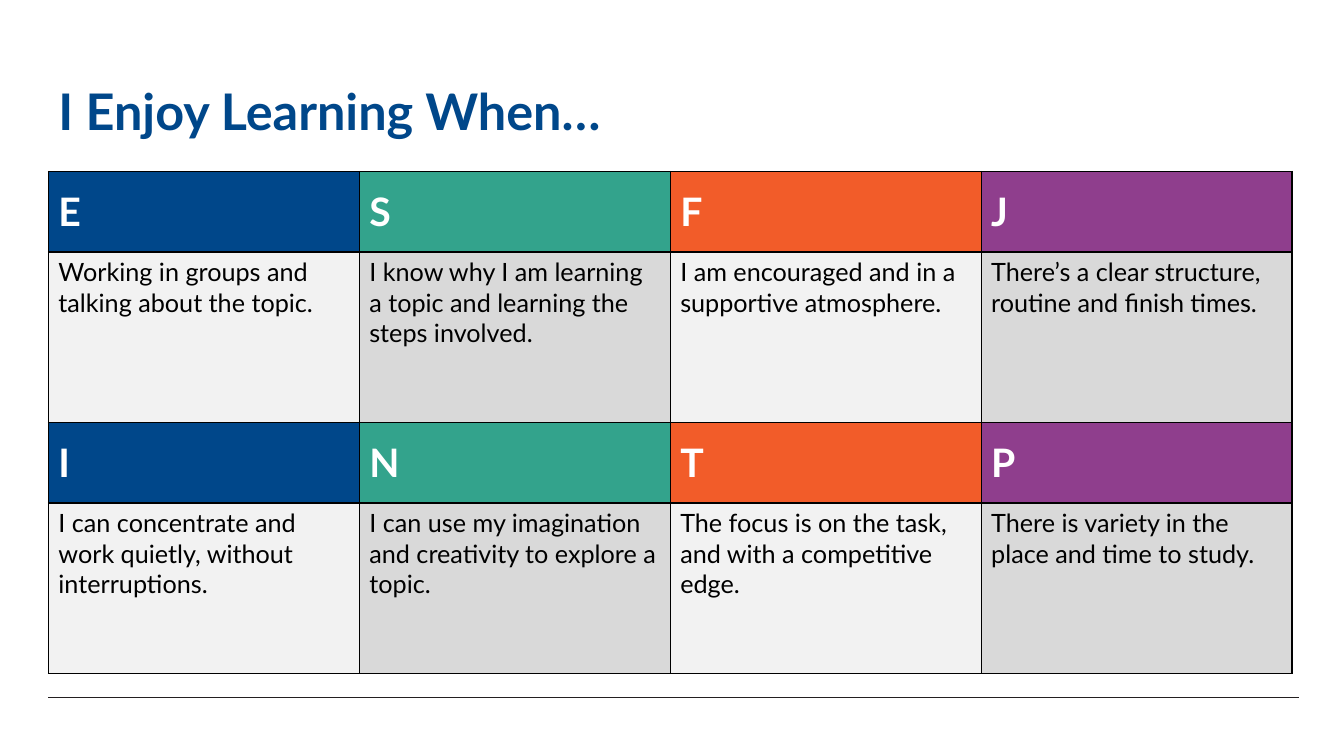
from lxml import etree
from pptx import Presentation
from pptx import util as u
from pptx.dml.color import RGBColor
from pptx.enum import shapes, text
from pptx.oxml.ns import qn

COLORS = {
    "blue": "00478A", "green": "33A38C", "orange": "F25C29", "purple": "8F3E8D",
    "light": "F2F2F2", "grey": "D9D9D9", "white": "FFFFFF", "black": "000000",
    "rule": "231F20",
}
TITLE = {"size": u.Pt(36), "bold": True, "color": "blue"}
LETTER = {"size": u.Pt(28), "bold": True, "color": "white"}
BODY = {"size": u.Pt(18), "bold": False, "color": "black"}

LETTER_FILLS = ["blue", "green", "orange", "purple"]
BODY_FILLS = ["light", "grey", "light", "grey"]
LETTER_HEIGHT, BODY_HEIGHT = 57.6, 121.68
LEFT, COLUMN_WIDTH = 34.56, 222.12

PREFERENCES = [
    ("ESFJ", [
        "Working in groups and talking about the topic.",
        "I know why I am learning a topic and learning the steps involved.",
        "I am encouraged and in a supportive atmosphere.",
        "There’s a clear structure, routine and finish times.",
    ]),
    ("INTP", [
        "I can concentrate and work quietly, without interruptions.",
        "I can use my imagination and creativity to explore a topic.",
        "The focus is on the task, and with a competitive edge.",
        "There is variety in the place and time to study.",
    ]),
]


def rgb(name):
    """Return the colour with the given name."""
    return RGBColor.from_string(COLORS[name])


class SlideBuilder:
    """Add styled elements to one slide."""

    def __init__(self, slide, font_name):
        """Keep the slide and its font."""
        self.slide = slide
        self.font_name = font_name

    def set_text(self, frame, content, style):
        """Put styled, left-aligned text in a frame."""
        frame.text = content
        paragraph = frame.paragraphs[0]
        paragraph.alignment = text.PP_ALIGN.LEFT
        font = paragraph.runs[0].font
        font.name = self.font_name
        for name, value in style.items():
            if name == "color":
                font.color.rgb = rgb(value)
            else:
                setattr(font, name, value)

    def title(self, content, left, top, width, height):
        """Place and fill the title placeholder."""
        shape = self.slide.shapes.title
        box = {"left": left, "top": top, "width": width, "height": height}
        for name, value in box.items():
            setattr(shape, name, u.Pt(value))
        frame = shape.text_frame
        frame.word_wrap = True
        frame.auto_size = text.MSO_AUTO_SIZE.NONE
        frame.vertical_anchor = text.MSO_ANCHOR.BOTTOM
        self.set_text(frame, content, TITLE)
        frame.paragraphs[0].line_spacing = 0.9

    def rule(self, left, right, y):
        """Draw a thin horizontal line."""
        line = self.slide.shapes.add_connector(
            shapes.MSO_CONNECTOR.STRAIGHT, u.Pt(left), u.Pt(y), u.Pt(right), u.Pt(y))
        line.line.color.rgb = rgb("rule")
        line.line.width = u.Pt(0.5)
        etree.SubElement(line._element.spPr, qn("a:effectLst"))

    def cell(self, cell, content, style, fill, anchor):
        """Fill, outline and label one table cell."""
        properties = cell._tc.get_or_add_tcPr()
        for side in ("lnL", "lnR", "lnT", "lnB"):
            border = etree.SubElement(properties, qn(f"a:{side}"), w=str(u.Pt(1)))
            solid = etree.SubElement(border, qn("a:solidFill"))
            etree.SubElement(solid, qn("a:srgbClr"), val=COLORS["black"])
        cell.fill.solid()
        cell.fill.fore_color.rgb = rgb(fill)
        cell.vertical_anchor = anchor
        self.set_text(cell.text_frame, content, style)

    def table(self, groups, left, top):
        """Add a letter row and a statement row for each group."""
        rows = []
        for letters, statements in groups:
            rows.append((letters, LETTER_HEIGHT, LETTER, LETTER_FILLS, text.MSO_ANCHOR.MIDDLE))
            rows.append((statements, BODY_HEIGHT, BODY, BODY_FILLS, text.MSO_ANCHOR.TOP))
        columns = len(LETTER_FILLS)
        table = self.slide.shapes.add_table(
            len(rows), columns, u.Pt(left), u.Pt(top),
            u.Pt(columns * COLUMN_WIDTH), u.Pt(sum(row[1] for row in rows))).table
        table.first_row = table.horz_banding = False
        for column in table.columns:
            column.width = u.Pt(COLUMN_WIDTH)
        for index, (contents, height, style, fills, anchor) in enumerate(rows):
            table.rows[index].height = u.Pt(height)
            for cell, content, fill in zip(table.rows[index].cells, contents, fills):
                self.cell(cell, content, style, fill, anchor)


def main():
    """Build and save the presentation."""
    presentation = Presentation()
    presentation.slide_width = u.Pt(960)
    presentation.slide_height = u.Pt(540)
    slide = presentation.slides.add_slide(presentation.slide_layouts.get_by_name("Title Only"))
    builder = SlideBuilder(slide, "Lato")
    builder.rule(LEFT, 928.08, 498.24)
    builder.title("I Enjoy Learning When…", LEFT, 28.8, 893.52, 75.6)
    builder.table(PREFERENCES, LEFT, 122.4)
    presentation.save("out.pptx")


if __name__ == "__main__":
    main()
